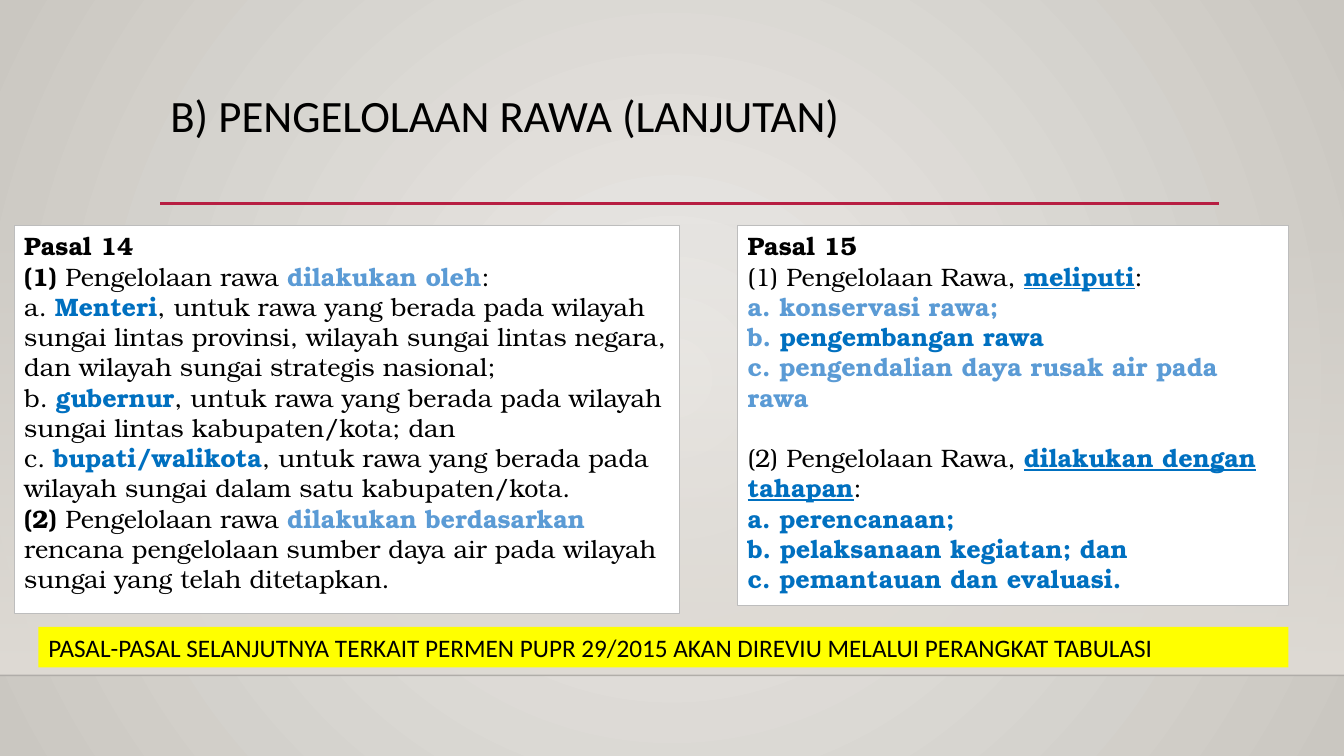
"""Build the slide on swamp management, articles 14 and 15."""
from lxml import etree
from pptx import Presentation
from pptx.dml.color import RGBColor
from pptx.enum.shapes import MSO_CONNECTOR, MSO_SHAPE
from pptx.enum.text import MSO_ANCHOR, PP_ALIGN
from pptx.oxml.ns import qn
from pptx.util import Cm, Pt

RECTANGLE = MSO_SHAPE.RECTANGLE
STRAIGHT = MSO_CONNECTOR.STRAIGHT
TOP, MIDDLE = MSO_ANCHOR.TOP, MSO_ANCHOR.MIDDLE
LEFT = PP_ALIGN.LEFT

COLORS = {
    "center": "ECEAE7", "edge": "CAC7C1", "band": "DFDBD5",
    "floor": "000001", "rule": "B71E42", "text": "000000",
    "light": "5B9BD5", "strong": "0070C0", "card": "FFFFFF",
    "border": "BDBDBD", "banner": "FFFF00",
}
STYLES = {
    "plain": ("text", False, False),
    "bold": ("text", True, False),
    "light": ("light", True, False),
    "strong": ("strong", True, False),
    "underlined": ("strong", True, True),
}
HEADING_FONT, ARTICLE_FONT = "Calibri", "TeX Gyre Bonum"

ARTICLE_14 = [
    [("Pasal 14", "bold")],
    [("(1) ", "bold"), ("Pengelolaan rawa ", "plain"), ("dilakukan oleh", "light"), (":", "plain")],
    [("a. ", "plain"), ("Menteri", "strong"),
     (", untuk rawa yang berada pada wilayah sungai lintas provinsi, wilayah sungai "
      "lintas negara, dan wilayah sungai strategis nasional;", "plain")],
    [("b. ", "plain"), ("gubernur", "strong"),
     (", untuk rawa yang berada pada wilayah sungai lintas kabupaten/kota; dan", "plain")],
    [("c. ", "plain"), ("bupati/walikota", "strong"),
     (", untuk rawa yang berada pada wilayah sungai dalam satu kabupaten/kota.", "plain")],
    [("(2) ", "bold"), ("Pengelolaan rawa ", "plain"), ("dilakukan berdasarkan ", "light"),
     ("rencana pengelolaan sumber daya air pada wilayah sungai yang telah ditetapkan.", "plain")],
]
ARTICLE_15_SCOPE = [
    [("Pasal 15", "bold")],
    [("(1) Pengelolaan Rawa, ", "plain"), ("meliputi", "underlined"), (":", "plain")],
    [("a. konservasi rawa;", "light")],
    [("b. ", "light"), ("pengembangan rawa", "strong")],
    [("c. pengendalian daya rusak air pada rawa", "light")],
]
ARTICLE_15_STAGES = [
    [("(2) Pengelolaan Rawa, ", "plain"), ("dilakukan dengan", "underlined")],
    [("tahapan", "underlined"), (":", "plain")],
    [("a. perencanaan;", "strong")],
    [("b. pelaksanaan kegiatan; dan", "strong")],
    [("c. pemantauan dan evaluasi.", "strong")],
]


def rgb(name):
    """Return the named colour."""
    return RGBColor.from_string(COLORS[name])


def set_alpha(color_element, percent):
    """Set the opacity of a colour element."""
    etree.SubElement(color_element, qn("a:alpha")).set("val", str(percent * 1000))


def set_gradient(fill, start, end):
    """Give a fill a gradient between two named colours."""
    fill.gradient()
    for stop, name in zip(fill.gradient_stops, (start, end)):
        stop.color.rgb = rgb(name)


def paint_background(slide):
    """Paint a circular gradient from the centre of the slide."""
    set_gradient(slide.background.fill, "center", "edge")
    gradient = next(slide.element.iter(qn("a:gradFill")))
    linear = gradient.find(qn("a:lin"))
    circle = etree.Element(qn("a:path"), {"path": "circle"})
    sides = dict.fromkeys("ltrb", "50000")
    etree.SubElement(circle, qn("a:fillToRect"), sides)
    gradient.replace(linear, circle)


def add_rectangle(slide, left, top, width, height):
    """Add a rectangle without shadow or outline, measured in centimetres."""
    rectangle = slide.shapes.add_shape(RECTANGLE, Cm(left), Cm(top), Cm(width), Cm(height))
    rectangle.shadow.inherit = False
    rectangle.line.fill.background()
    return rectangle


def add_band(slide):
    """Add the band that fades in towards the floor line."""
    band = add_rectangle(slide, 0, 5.61, 33.87, 11.41)
    set_gradient(band.fill, "band", "band")
    band.fill.gradient_angle = 270
    set_alpha(next(band.element.iter(qn("a:srgbClr"))), 0)


def add_line(slide, left, right, y, color, width, opacity=100):
    """Add a horizontal line."""
    line = slide.shapes.add_connector(STRAIGHT, Cm(left), Cm(y), Cm(right), Cm(y))
    line.line.color.rgb = rgb(color)
    line.line.width = Pt(width)
    if opacity < 100:
        set_alpha(next(line.element.iter(qn("a:srgbClr"))), opacity)
    etree.SubElement(line.element.spPr, qn("a:effectLst"))


def set_title(slide, text):
    """Place and format the slide title."""
    title = slide.shapes.title
    title.left, title.top, title.width, title.height = Cm(4.04), Cm(2.24), Cm(26.67), Cm(2.92)
    title.text_frame.text = text
    title.text_frame.word_wrap = True
    title.text_frame.vertical_anchor = TOP
    paragraph = title.text_frame.paragraphs[0]
    paragraph.alignment = LEFT
    paragraph.line_spacing = 0.9
    set_font(paragraph, HEADING_FONT, 32)
    paragraph.font.color.rgb = rgb("text")


def set_font(paragraph, name, size):
    """Set the typeface and size of a paragraph."""
    paragraph.font.name = name
    paragraph.font.size = Pt(size)


def add_text_panel(slide, box, color, anchor, font, lines):
    """Add a filled panel and return it with its styled paragraphs."""
    panel = add_rectangle(slide, *box)
    panel.fill.solid()
    panel.fill.fore_color.rgb = rgb(color)
    frame = panel.text_frame
    frame.word_wrap = True
    frame.vertical_anchor = anchor
    for index, line in enumerate(lines):
        paragraph = frame.add_paragraph() if index else frame.paragraphs[0]
        paragraph.alignment = LEFT
        set_font(paragraph, font, 18)
        for text, style in line:
            run = paragraph.add_run()
            run.text = text
            color_name, run.font.bold, run.font.underline = STYLES[style]
            run.font.color.rgb = rgb(color_name)
    return panel


def add_article(slide, box, lines):
    """Add a bordered card with the text of an article."""
    card = add_text_panel(slide, box, "card", TOP, ARTICLE_FONT, lines)
    card.line.color.rgb = rgb("border")
    card.line.width = Pt(0.75)
    return card


def main():
    """Build and save the slide."""
    presentation = Presentation()
    presentation.slide_width, presentation.slide_height = Cm(33.87), Cm(19.05)
    slide = presentation.slides.add_slide(presentation.slide_layouts[5])
    paint_background(slide)
    add_band(slide)
    add_line(slide, 0, 33.87, 17.02, "floor", 1, opacity=20)
    add_line(slide, 4.04, 30.73, 5.13, "rule", 2.5)
    set_title(slide, "B) PENGELOLAAN RAWA (LANJUTAN)")
    add_article(slide, (0.36, 5.69, 16.76, 9.78), ARTICLE_14)
    article_15 = add_article(slide, (18.59, 5.69, 13.89, 9.58), ARTICLE_15_SCOPE + ARTICLE_15_STAGES)
    article_15.text_frame.paragraphs[len(ARTICLE_15_SCOPE)].space_before = Pt(21.6)
    notice = "PASAL-PASAL SELANJUTNYA TERKAIT PERMEN PUPR 29/2015 AKAN DIREVIU MELALUI PERANGKAT TABULASI"
    add_text_panel(slide, (0.97, 15.8, 31.5, 1.02), "banner", MIDDLE, HEADING_FONT, [[(notice, "plain")]])
    presentation.save("out.pptx")


if __name__ == "__main__":
    main()
